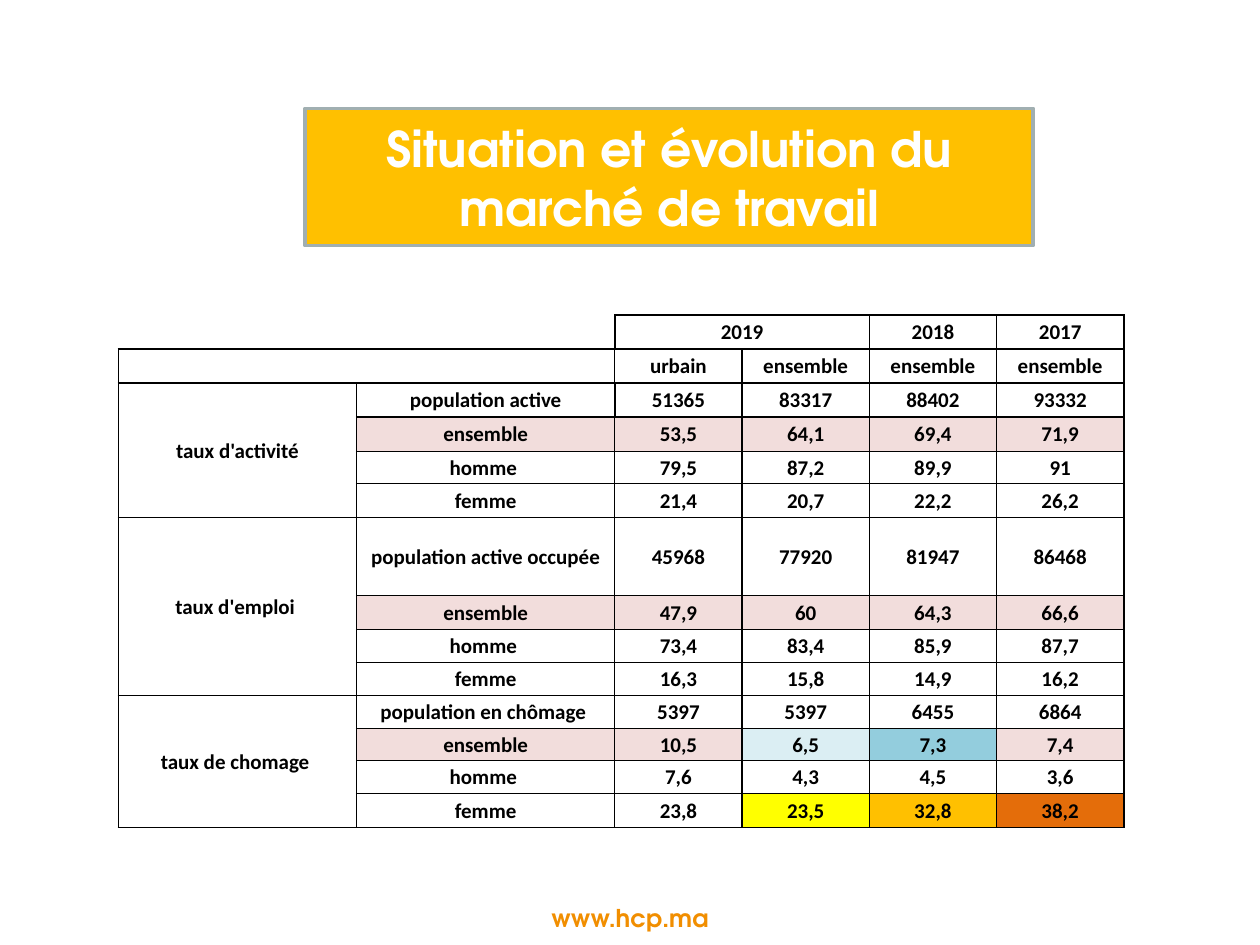
from dataclasses import dataclass

import lxml.etree
import pptx
import pptx.dml.color
import pptx.enum.shapes
import pptx.enum.text
import pptx.oxml.ns
import pptx.util

Inches = pptx.util.Inches
Pt = pptx.util.Pt
RGBColor = pptx.dml.color.RGBColor
ALIGN = pptx.enum.text.PP_ALIGN
ANCHOR = pptx.enum.text.MSO_ANCHOR
qn = pptx.oxml.ns.qn

BLACK = RGBColor(0x00, 0x00, 0x00)
WHITE = RGBColor(0xFF, 0xFF, 0xFF)
GOLD = RGBColor(0xFF, 0xC0, 0x00)
STEEL = RGBColor(0xA1, 0xAF, 0xB1)
ORANGE = RGBColor(0xF1, 0x8E, 0x00)
PINK = RGBColor(0xF2, 0xDD, 0xDC)
PALE = RGBColor(0xDB, 0xEE, 0xF3)
AQUA = RGBColor(0x93, 0xCD, 0xDD)
YELLOW = RGBColor(0xFF, 0xFF, 0x00)
RUST = RGBColor(0xE4, 0x6D, 0x0A)

TITLE_FONT = "TeX Gyre Adventor"
TABLE_FONT = "Calibri"
THIN, THICK = 0.5, 1
WIDTHS = [1.89, 2.05] + [1.01] * 4
HEIGHTS = [0.27] * 4 + [0.26, 0.27, 0.62, 0.27] + [0.26] * 5 + [0.27]


@dataclass
class Group:
    name: str
    count: str
    rows: list[list[str]]


HEADS = [
    ["", "", "2019", "", "2018", "2017"],
    ["", "", "urbain", "ensemble", "ensemble", "ensemble"],
]
LABELS = ["ensemble", "homme ", "femme"]
GROUPS = [
    Group("taux d'activité", "population active", [
        ["51365", "83317", "88402", "93332"],
        ["53,5", "64,1", "69,4", "71,9"],
        ["79,5", "87,2", "89,9", "91"],
        ["21,4", "20,7", "22,2", "26,2"],
    ]),
    Group("taux d'emploi ", "population active occupée", [
        ["45968", "77920", "81947", "86468"],
        ["47,9", "60", "64,3", "66,6"],
        ["73,4", "83,4", "85,9", "87,7"],
        ["16,3", "15,8", "14,9", "16,2"],
    ]),
    Group("taux de chomage ", "population en chômage ", [
        ["5397", "5397", "6455", "6864"],
        ["10,5", "6,5", "7,3", "7,4"],
        ["7,6", "4,3", "4,5", "3,6"],
        ["23,8", "23,5", "32,8", "38,2"],
    ]),
]
ACCENTS = {
    (11, 3): PALE, (11, 4): AQUA,
    (13, 3): YELLOW, (13, 4): GOLD, (13, 5): RUST,
}


def write(frame, text: str, font: str, size: float, color: RGBColor) -> None:
    para = frame.paragraphs[0]
    para.alignment = ALIGN.CENTER
    if not text:
        lxml.etree.SubElement(para._p, qn("a:endParaRPr"), sz=str(size * 100))
        return
    run = para.add_run()
    run.text = text
    run.font.name = font
    run.font.size = Pt(size)
    run.font.bold = True
    run.font.color.rgb = color


def upright(row: int, line: int) -> float:
    if (row == 0 and line < 2) or (row == 1 and line == 1):
        return 0
    return THIN if line == 2 and row not in (0, 2) else THICK


def level(line: int, col: int) -> float:
    if line == 0 and col < 2:
        return 0
    heavy = line <= 3 or line == len(HEIGHTS) or (line, col) == (6, 1)
    return THICK if heavy else THIN


def border(cell, side: str, width: float) -> None:
    props = cell._tc.get_or_add_tcPr()
    edge = lxml.etree.SubElement(props, qn(f"a:ln{side}"), w=str(Pt(width or THIN)))
    if width:
        fill = lxml.etree.SubElement(edge, qn("a:solidFill"))
        lxml.etree.SubElement(fill, qn("a:srgbClr"), val=str(BLACK))
    else:
        lxml.etree.SubElement(edge, qn("a:noFill"))


def shade(row: int, col: int) -> RGBColor | None:
    band = row in (3, 7, 11) and col > 0
    return ACCENTS.get((row, col), PINK if band else None)


def style(cell, text: str, row: int, col: int) -> None:
    write(cell.text_frame, text, TABLE_FONT, 12, BLACK)
    cell.vertical_anchor = ANCHOR.MIDDLE
    cell.margin_left = cell.margin_right = cell.margin_top = Inches(0.01)
    cell.margin_bottom = 0
    right = col + (cell.span_width if cell.is_merge_origin else 1)
    base = row + (cell.span_height if cell.is_merge_origin else 1)
    border(cell, "L", upright(row, col))
    border(cell, "R", upright(row, right))
    border(cell, "T", level(row, col))
    border(cell, "B", level(base, col))
    color = shade(row, col)
    if color is None:
        cell.fill.background()
    else:
        cell.fill.solid()
        cell.fill.fore_color.rgb = color


def add_title(slide) -> None:
    title = slide.shapes.add_shape(
        pptx.enum.shapes.MSO_SHAPE.RECTANGLE,
        Inches(2.42), Inches(0.86), Inches(5.78), Inches(1.09))
    title.shadow.inherit = False
    title.fill.solid()
    title.fill.fore_color.rgb = GOLD
    title.line.color.rgb = STEEL
    title.line.width = Pt(2)
    title.text_frame.word_wrap = True
    title.text_frame.vertical_anchor = ANCHOR.MIDDLE
    write(title.text_frame, "Situation et évolution du marché de travail",
          TITLE_FONT, 28, WHITE)


def add_grid(slide) -> None:
    lines = list(HEADS)
    for group in GROUPS:
        for label, values in zip([group.count] + LABELS, group.rows):
            lines.append([group.name, label] + values)
    table = slide.shapes.add_table(
        len(HEIGHTS), len(WIDTHS), Inches(0.94), Inches(2.5),
        Inches(sum(WIDTHS)), Inches(sum(HEIGHTS))).table
    table.first_row = table.horz_banding = False
    for column, width in zip(table.columns, WIDTHS):
        column.width = Inches(width)
    for band, height in zip(table.rows, HEIGHTS):
        band.height = Inches(height)
    table.cell(0, 2).merge(table.cell(0, 3))
    for top in (2, 6, 10):
        table.cell(top, 0).merge(table.cell(top + 3, 0))
    for row, line in enumerate(lines):
        for col, text in enumerate(line):
            cell = table.cell(row, col)
            if not cell.is_spanned:
                style(cell, text, row, col)


def add_footer(slide) -> None:
    footer = slide.shapes.add_textbox(
        Inches(3.82), Inches(7.12), Inches(2.36), Inches(0.33))
    footer.text_frame.word_wrap = True
    footer.text_frame.vertical_anchor = ANCHOR.MIDDLE
    write(footer.text_frame, "www.hcp.ma", TITLE_FONT, 14, ORANGE)


def main() -> None:
    deck = pptx.Presentation()
    deck.slide_width = Inches(10)
    deck.slide_height = Inches(7.5)
    slide = deck.slides.add_slide(deck.slide_layouts[6])
    add_footer(slide)
    add_title(slide)
    add_grid(slide)
    deck.save("out.pptx")


if __name__ == "__main__":
    main()
